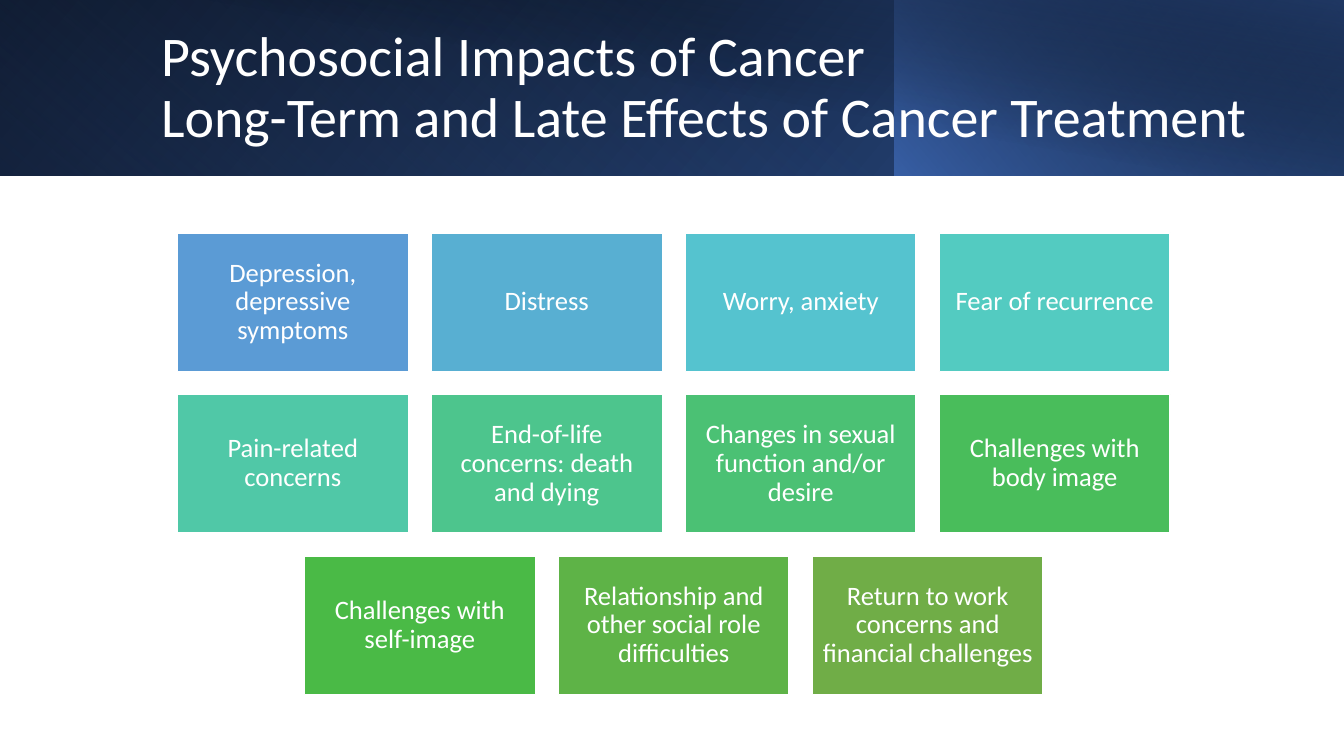
import pptx
import pptx.util
import pptx.dml.color
import pptx.enum.shapes
import pptx.enum.text
import pptx.oxml
import pptx.oxml.ns
from dataclasses import dataclass

Cm, Pt = pptx.util.Cm, pptx.util.Pt
RECT = pptx.enum.shapes.MSO_SHAPE.RECTANGLE
MIDDLE = pptx.enum.text.MSO_ANCHOR.MIDDLE
CENTER = pptx.enum.text.PP_ALIGN.CENTER


@dataclass(frozen=True)
class Theme:
    font: str = "Calibri"
    title_size: int = 40
    card_size: int = 19
    line_spacing: float = 0.9
    white: str = "FFFFFF"
    black: str = "000000"
    blue: str = "4472C4"
    mid_blue: str = "2F5597"
    navy: str = "203864"


THEME = Theme()

TITLE = "Psychosocial Impacts of Cancer\vLong-Term and Late Effects of Cancer Treatment"

# Card text and fill, in reading order
IMPACTS = [
    ("Depression, depressive symptoms", "5B9BD5"),
    ("Distress", "58AFD2"),
    ("Worry, anxiety", "55C3CF"),
    ("Fear of recurrence", "53CBC1"),
    ("Pain-related concerns", "50C8A7"),
    ("End-of-life concerns: death and dying", "4DC58D"),
    ("Changes in sexual function and/or desire", "4BC174"),
    ("Challenges with body image", "49BD5B"),
    ("Challenges with self-image", "4ABA46"),
    ("Relationship and other social role difficulties", "5EB347"),
    ("Return to work concerns and financial challenges", "70AD47"),
]


def rgb(color):
    return pptx.dml.color.RGBColor.from_string(color)


def add_rect(slide, x, y, w, h):
    sp = slide.shapes.add_shape(RECT, Cm(x), Cm(y), Cm(w), Cm(h))
    sp.shadow.inherit = False
    return sp


def style_text(tf, text, size):
    tf.word_wrap = True
    tf.vertical_anchor = MIDDLE
    tf.text = text
    p = tf.paragraphs[0]
    p.line_spacing = THEME.line_spacing
    p.font.name = THEME.font
    p.font.size = Pt(size)
    p.font.color.rgb = rgb(THEME.white)
    return p


def set_gradient(sp, stops, angle):
    """Fill with (position, colour, opacity) stops, all in percent."""
    gs = "".join(
        f'<a:gs pos="{pos * 1000}"><a:srgbClr val="{color}">'
        f'<a:alpha val="{opacity * 1000}"/></a:srgbClr></a:gs>'
        for pos, color, opacity in stops)
    grad = pptx.oxml.parse_xml(
        f'<a:gradFill {pptx.oxml.ns.nsdecls("a")} rotWithShape="1">'
        f'<a:gsLst>{gs}</a:gsLst><a:lin ang="{angle * 60000}" scaled="0"/></a:gradFill>')
    sp._element.spPr.find(pptx.oxml.ns.qn("a:prstGeom")).addnext(grad)


def add_header(slide, x, y, w, h):
    split, inset = 22.54, 1.27
    # Layers from back to front: left, width, mirrored, rotation, angle, stops
    layers = [
        (0, w, True, 0, 140, [(0, THEME.black, 100), (100, THEME.mid_blue, 100)]),
        (0, split, True, 180, 230, [(20, THEME.blue, 0), (100, THEME.navy, 55)]),
        (split, w - split, True, 0, 220, [(0, THEME.blue, 66), (100, THEME.black, 30)]),
        (inset, w - inset, False, 0, 280, [(50, THEME.black, 0), (99, THEME.navy, 52)]),
    ]
    for left, width, mirrored, rotation, angle, stops in layers:
        sp = add_rect(slide, x + left, y, width, h)
        sp.rotation = rotation
        if mirrored:
            sp._element.spPr.get_or_add_xfrm().set("flipH", "1")
        set_gradient(sp, stops, angle)
        sp.line.fill.background()

    # Title
    tb = slide.shapes.add_textbox(Cm(x + 3.81), Cm(y + 0.81), Cm(28.47), Cm(2.87))
    style_text(tb.text_frame, TITLE, THEME.title_size)


def add_card(slide, x, y, w, h, text, color):
    sp = add_rect(slide, x, y, w, h)
    sp.fill.solid()
    sp.fill.fore_color.rgb = rgb(color)
    sp.line.color.rgb = rgb(THEME.white)
    sp.line.width = Pt(1)
    tf = sp.text_frame
    tf.margin_left = tf.margin_right = tf.margin_top = tf.margin_bottom = Cm(0.2)
    style_text(tf, text, THEME.card_size).alignment = CENTER


def add_cards(slide, x, y, w, h, columns=4, gap=0.58):
    rows = [IMPACTS[i:i + columns] for i in range(0, len(IMPACTS), columns)]
    card_w = (w - gap * (columns - 1)) / columns
    card_h = (h - gap * (len(rows) - 1)) / len(rows)
    for r, row in enumerate(rows):
        # A short row is centred
        left = x + (columns - len(row)) * (card_w + gap) / 2
        for c, (text, color) in enumerate(row):
            add_card(slide, left + c * (card_w + gap), y + r * (card_h + gap),
                     card_w, card_h, text, color)


def main():
    prs = pptx.Presentation()
    prs.slide_width, prs.slide_height = Cm(33.87), Cm(19.05)
    slide = prs.slides.add_slide(prs.slide_layouts[6])
    add_header(slide, 0, 0, 33.87, 4.43)
    add_cards(slide, 4.47, 5.87, 25.02, 11.63)
    prs.save("out.pptx")


if __name__ == "__main__":
    main()
